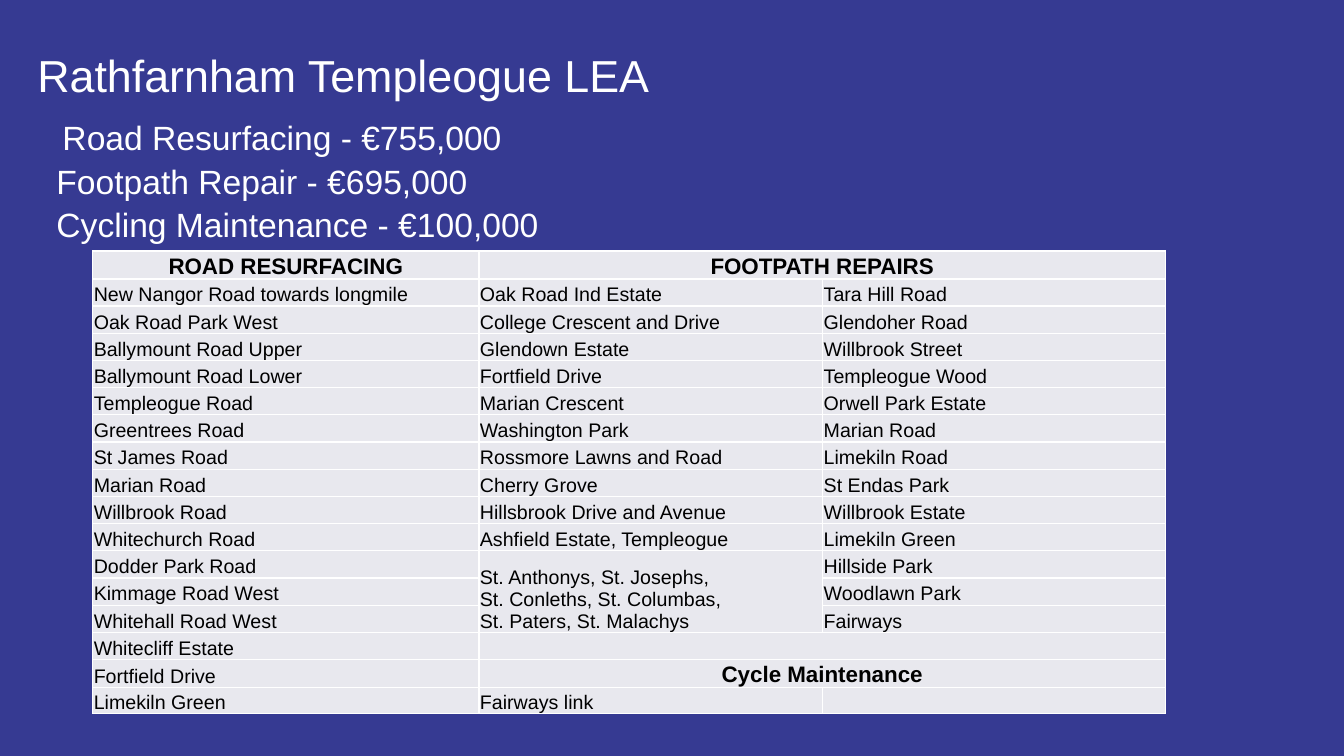
from lxml import etree
from pptx import Presentation
from pptx.dml.color import RGBColor
from pptx.enum.text import MSO_ANCHOR as ANCHOR, PP_ALIGN as ALIGN
from pptx.oxml.ns import qn
from pptx.util import Inches, Pt

NAVY = RGBColor(0x36, 0x3A, 0x92)
WHITE = RGBColor(0xFF, 0xFF, 0xFF)
BLACK = RGBColor(0, 0, 0)
PALE = RGBColor(0xE8, 0xE8, 0xEE)

# text, size, indent in inches, space before in points
HEADING = [
    ("Rathfarnham Templeogue LEA", 32, 0, 0),
    ("Road Resurfacing - €755,000", 24, 0.25, 9),
    ("Footpath Repair - €695,000", 24, 0.19, 0),
    ("Cycling Maintenance - €100,000", 24, 0.19, 0),
]
SAINTS = "St. Anthonys, St. Josephs,\nSt. Conleths, St. Columbas,\nSt. Paters, St. Malachys"
ROWS = [
    ("ROAD RESURFACING", "FOOTPATH REPAIRS", ""),
    ("New Nangor Road towards longmile", "Oak Road Ind Estate", "Tara Hill Road"),
    ("Oak Road Park West", "College Crescent and Drive", "Glendoher Road"),
    ("Ballymount Road Upper", "Glendown Estate", "Willbrook Street"),
    ("Ballymount Road Lower", "Fortfield Drive", "Templeogue Wood"),
    ("Templeogue Road", "Marian Crescent", "Orwell Park Estate"),
    ("Greentrees Road", "Washington Park", "Marian Road"),
    ("St James Road", "Rossmore Lawns and Road", "Limekiln Road"),
    ("Marian Road", "Cherry Grove", "St Endas Park"),
    ("Willbrook Road", "Hillsbrook Drive and Avenue", "Willbrook Estate"),
    ("Whitechurch Road", "Ashfield Estate, Templeogue", "Limekiln Green"),
    ("Dodder Park Road", SAINTS, "Hillside Park"),
    ("Kimmage Road West", "", "Woodlawn Park"),
    ("Whitehall Road West", "", "Fairways"),
    ("Whitecliff Estate", "", ""),
    ("Fortfield Drive", "Cycle Maintenance", ""),
    ("Limekiln Green", "Fairways link", ""),
]
HEADERS = {"ROAD RESURFACING", "FOOTPATH REPAIRS", "Cycle Maintenance"}
MERGES = [((0, 1), (0, 2)), ((11, 1), (13, 1)), ((14, 1), (14, 2)), ((15, 1), (15, 2))]
COL_WIDTHS = [3.83, 3.41, 3.4]
ROW_HEIGHTS = [0.27] * 16 + [0.26]


class SlideBuilder:
    def __init__(self, prs, font="Arial"):
        self.font = font
        self.slide = prs.slides.add_slide(prs.slide_layouts[6])
        fill = self.slide.background.fill
        fill.solid()
        fill.fore_color.rgb = NAVY

    def style_runs(self, p, size, color, bold=False):
        for r in p.runs:
            r.font.name = self.font
            r.font.size = Pt(size)
            r.font.bold = bold
            r.font.color.rgb = color

    def heading(self, lines, left, top, width, height):
        box = self.slide.shapes.add_textbox(*map(Inches, (left, top, width, height)))
        tf = box.text_frame
        tf.word_wrap = True
        tf.margin_left = tf.margin_right = tf.margin_top = tf.margin_bottom = 0
        tf.text = "\n".join(text for text, *_ in lines)
        for p, (_, size, indent, before) in zip(tf.paragraphs, lines):
            p._p.get_or_add_pPr().set("marL", str(Inches(indent)))
            p.line_spacing = 1.07
            p.space_before = Pt(before)
            self.style_runs(p, size, WHITE)

    def borders(self, cell):
        tc_pr = cell._tc.get_or_add_tcPr()
        for side in ("lnL", "lnR", "lnT", "lnB"):
            line = etree.SubElement(tc_pr, qn(f"a:{side}"), w=str(Pt(1)))
            solid = etree.SubElement(line, qn("a:solidFill"))
            etree.SubElement(solid, qn("a:srgbClr"), val=str(WHITE))

    def cell(self, cell, text):
        header = text in HEADERS
        self.borders(cell)
        cell.fill.solid()
        cell.fill.fore_color.rgb = PALE
        cell.margin_left = cell.margin_right = cell.margin_top = Inches(0.01)
        cell.margin_bottom = 0
        cell.vertical_anchor = ANCHOR.BOTTOM
        cell.text_frame.text = text
        for p in cell.text_frame.paragraphs:
            p.alignment = ALIGN.CENTER if header else ALIGN.LEFT
            self.style_runs(p, 16 if header else 14, BLACK, header)
            if not text:  # keeps an empty row from growing
                etree.SubElement(p._p, qn("a:endParaRPr"), sz="1400")

    def table(self, rows, left, top):
        size = sum(COL_WIDTHS), sum(ROW_HEIGHTS)
        table = self.slide.shapes.add_table(
            len(rows), len(COL_WIDTHS), *map(Inches, (left, top, *size))).table
        for column, width in zip(table.columns, COL_WIDTHS):
            column.width = Inches(width)
        for row, height, texts in zip(table.rows, ROW_HEIGHTS, rows):
            row.height = Inches(height)
            for cell, text in zip(row.cells, texts):
                self.cell(cell, text)
        for first, last in MERGES:
            table.cell(*first).merge(table.cell(*last))


def main():
    prs = Presentation()
    prs.slide_width, prs.slide_height = Inches(13.33), Inches(7.5)
    s = SlideBuilder(prs)
    s.heading(HEADING, 0.37, 0.44, 7.24, 1.73)
    s.table(ROWS, 0.92, 2.49)
    prs.save("out.pptx")


if __name__ == "__main__":
    main()
